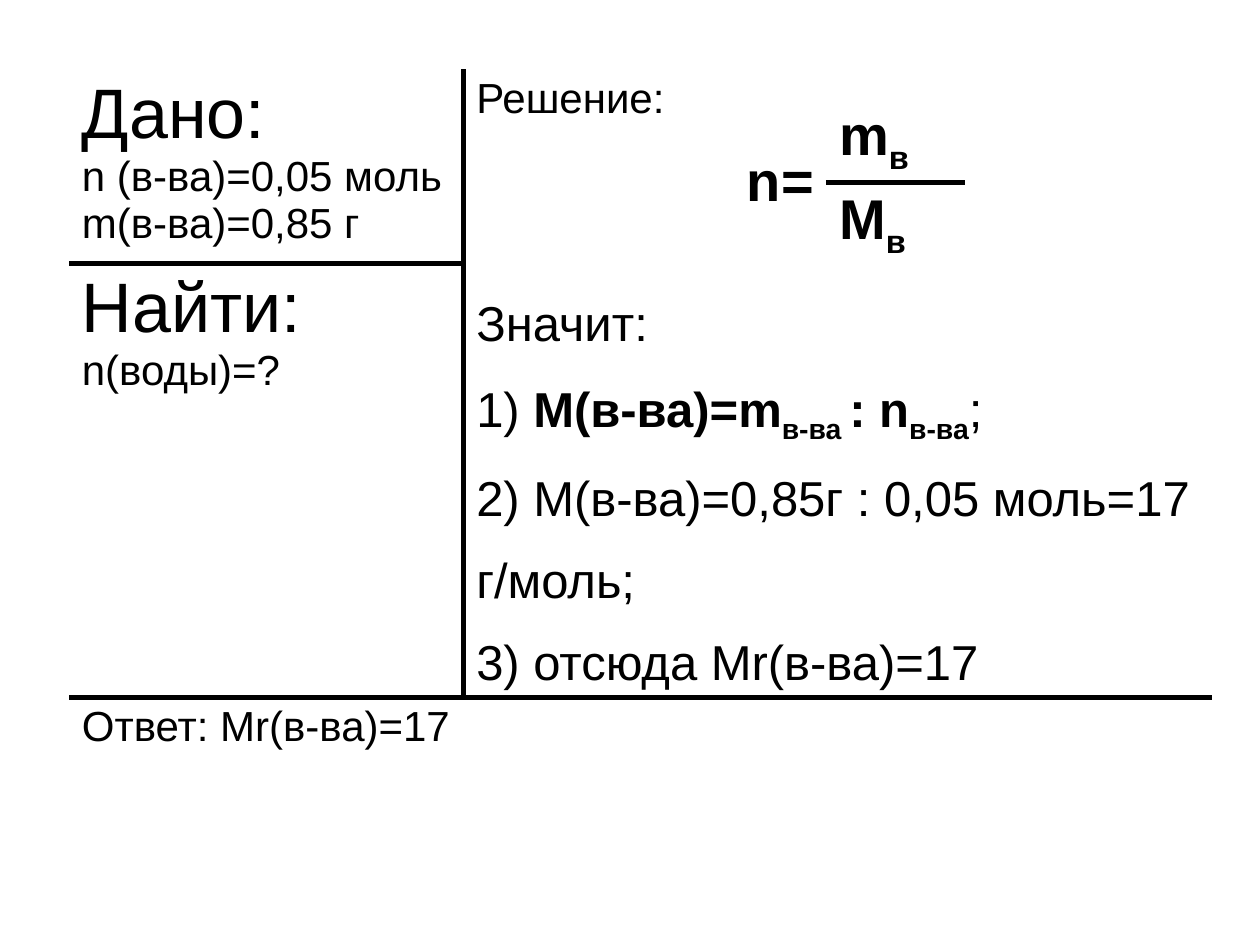
from lxml.etree import SubElement
from pptx import Presentation
from pptx.dml.color import RGBColor
from pptx.enum.text import MSO_ANCHOR, PP_ALIGN
from pptx.oxml.ns import qn
from pptx.util import Inches, Pt

BLACK, WHITE = "000000", "FFFFFF"
THICK, THIN = (BLACK, 3), (WHITE, 1)
SUB = {"sub": True}
BOLD = {"bold": True}
BOLD_SUB = {"bold": True, "sub": True}

# Content: each paragraph is a list of (text, format) runs
given = [[("Дано:", {"size": 40})],
         [("n (в-ва)=0,05 моль", {})],
         [("m(в-ва)=0,85 г", {})]]
solution = [[("Решение:", {})]]
find = [[("Найти: ", {"size": 40}), ("n(воды)=?", {})]]
steps = [[("Значит:", {})],
         [("1) ", {}), ("M(в-ва)=m", BOLD), ("в-ва ", BOLD_SUB),
          (": n", BOLD), ("в-ва", BOLD_SUB), (";", {})],
         [("2) M(в-ва)=0,85г : 0,05 моль=17 г/моль;", {})],
         [("3) отсюда Mr(в-ва)=17", {})]]
answer = [[("Ответ: Mr(в-ва)=17", {})]]
amount = [[("n=", {})]]
mass = [[("m", {}), ("в", SUB)]]
molar_mass = [[("М", {}), ("в", SUB)]]


def add_grid(slide, left, top, columns, rows):
    table = slide.shapes.add_table(
        len(rows), len(columns), Inches(left), Inches(top),
        Inches(sum(columns)), Inches(sum(rows))).table
    table.first_row = table.horz_banding = False
    for column, width in zip(table.columns, columns):
        column.width = Inches(width)
    for row, height in zip(table.rows, rows):
        row.height = Inches(height)
    return table


def write(cell, paragraphs, size=24, bold=False, align=PP_ALIGN.LEFT,
          spacing=None, anchor=MSO_ANCHOR.TOP):
    frame = cell.text_frame
    cell.vertical_anchor = anchor
    for index, runs in enumerate(paragraphs):
        paragraph = frame.add_paragraph() if index else frame.paragraphs[0]
        paragraph.alignment = align
        if spacing:
            paragraph.line_spacing = spacing
        for text, style in runs:
            run = paragraph.add_run()
            run.text = text
            run.font.name = "Arial"
            run.font.size = Pt(style.get("size", size))
            run.font.bold = style.get("bold", bold)
            run.font.color.rgb = RGBColor.from_string(BLACK)
            if style.get("sub"):
                run.font._element.set("baseline", "-25000")


def rule(cell, **sides):
    """Clear the fill and draw the given sides (L, R, T, B); hide the rest."""
    cell.fill.background()
    properties = cell._tc.get_or_add_tcPr()
    for position, side in enumerate("LRTB"):
        line = SubElement(properties, qn(f"a:ln{side}"))
        properties.insert(position, line)
        if side in sides:
            color, width = sides[side]
            line.set("w", str(Pt(width)))
            fill = SubElement(line, qn("a:solidFill"))
            SubElement(fill, qn("a:srgbClr")).set("val", color)
        else:
            SubElement(line, qn("a:noFill"))


presentation = Presentation()
presentation.slide_width, presentation.slide_height = Inches(10), Inches(7.5)
slide = presentation.slides.add_slide(presentation.slide_layouts[6])

# Problem sheet: given and find on the left, solution on the right
problem = add_grid(slide, 0.55, 0.55, (3.13, 5.94), (1.54, 3.44, 1.64))
problem.cell(2, 0).merge(problem.cell(2, 1))
write(problem.cell(0, 0), given)
write(problem.cell(0, 1), solution)
write(problem.cell(1, 0), find)
write(problem.cell(1, 1), steps, size=28, spacing=1.5)
write(problem.cell(2, 0), answer)
rule(problem.cell(0, 0), R=THICK, B=THICK)
rule(problem.cell(0, 1), L=THICK)
rule(problem.cell(1, 0), R=THICK, T=THICK, B=THICK)
rule(problem.cell(1, 1), L=THICK, B=THICK)
for column in range(2):
    rule(problem.cell(2, column), T=THICK)

# Formula: a fraction whose bar is the border between two cells
formula = add_grid(slide, 5.47, 0.78, (1.09, 1.09), (0.66, 0.61))
formula.cell(0, 0).merge(formula.cell(1, 0))
write(formula.cell(0, 0), amount, size=32, bold=True,
      align=PP_ALIGN.RIGHT, anchor=MSO_ANCHOR.MIDDLE)
for row, term in enumerate((mass, molar_mass)):
    # Subscripts inherit the bold of the formula
    write(formula.cell(row, 1), term, size=32, bold=True)
    rule(formula.cell(row, 0), L=THIN, R=THIN, T=THIN, B=THIN)
rule(formula.cell(0, 1), L=THIN, R=THIN, T=THIN, B=THICK)
rule(formula.cell(1, 1), L=THIN, R=THIN, T=THICK, B=THIN)

presentation.save("out.pptx")
